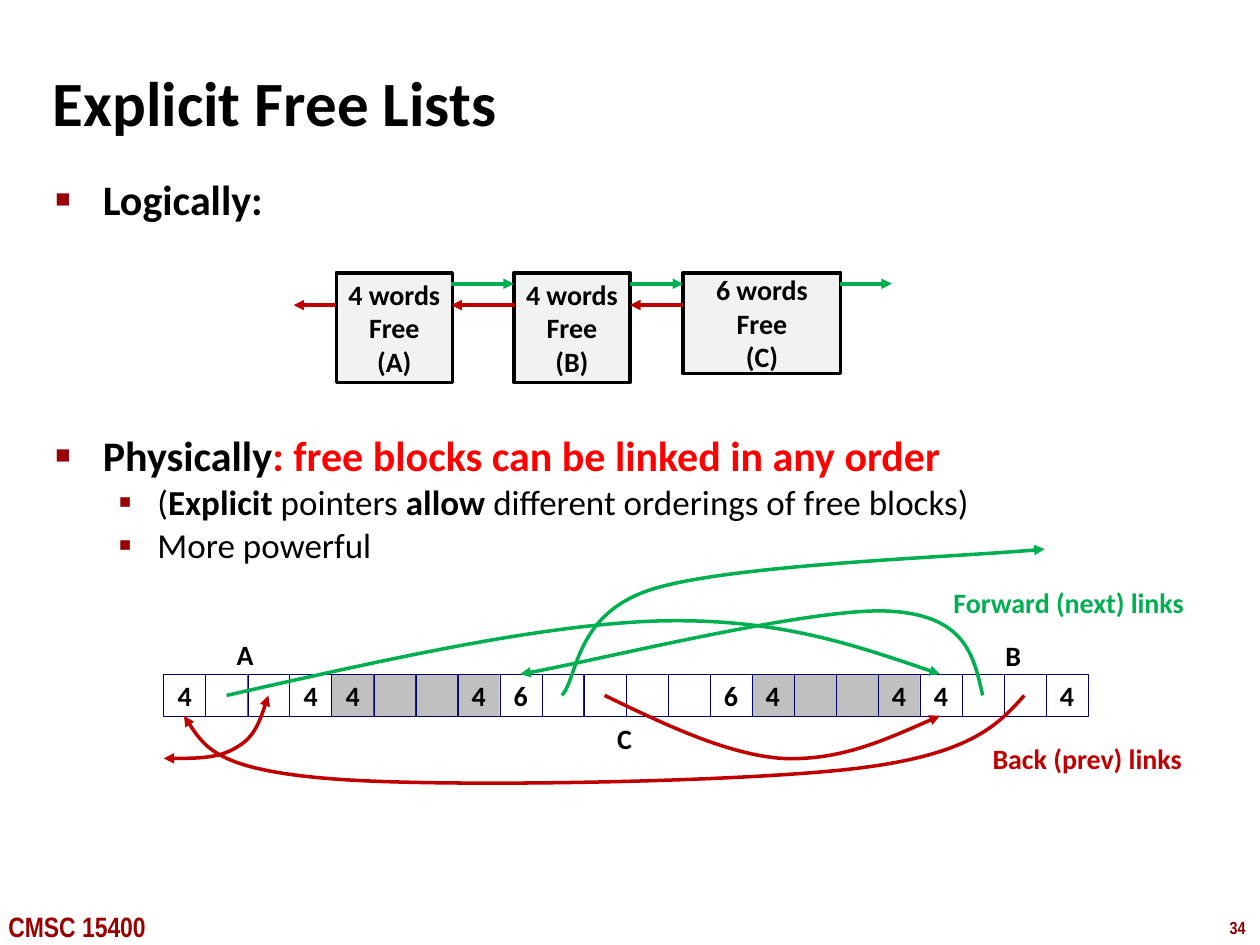
from dataclasses import dataclass

from lxml import etree
from pptx import Presentation
from pptx.dml.color import RGBColor
from pptx.enum.shapes import MSO_CONNECTOR, MSO_SHAPE
from pptx.enum.text import MSO_ANCHOR, MSO_AUTO_SIZE, PP_ALIGN
from pptx.oxml.ns import qn
from pptx.util import Cm, Pt

LINE, RECT = MSO_CONNECTOR.STRAIGHT, MSO_SHAPE.RECTANGLE
TOP, MIDDLE = MSO_ANCHOR.TOP, MSO_ANCHOR.MIDDLE
LEFT, CENTER = PP_ALIGN.LEFT, PP_ALIGN.CENTER
NO_FIT = MSO_AUTO_SIZE.NONE

BLACK = RGBColor(0x00, 0x00, 0x00)
WHITE = RGBColor(0xFF, 0xFF, 0xFF)
PALE = RGBColor(0xF2, 0xF2, 0xF2)
GREY = RGBColor(0xC0, 0xC0, 0xC0)
NAVY = RGBColor(0x00, 0x00, 0x66)
GREEN = RGBColor(0x00, 0xB0, 0x50)
CRIMSON = RGBColor(0xC0, 0x00, 0x00)
RED = RGBColor(0xFF, 0x00, 0x00)
MAROON = RGBColor(0x99, 0x00, 0x00)
DARK = RGBColor(0x80, 0x00, 0x00)


@dataclass
class Node:
    text: str
    left: float
    width: float
    height: float


@dataclass
class Arrow:
    start: float
    end: float
    y: float
    color: RGBColor


@dataclass
class Curve:
    points: list  # start, then two handles and an end for each bend
    color: RGBColor
    double: bool = False


@dataclass
class Label:
    text: str
    left: float
    top: float
    width: float
    color: RGBColor = BLACK
    size: int = 16
    font: str = "Calibri"


@dataclass
class Item:
    runs: list  # (text, bold, color)
    level: int
    before: float


def style(par, size: float, color: RGBColor, bold: bool = True, name: str = "Calibri") -> None:
    font = par.font
    font.name, font.size, font.bold = name, Pt(size), bold
    font.color.rgb = color


def add_heads(line, double: bool = False) -> None:
    ln = line.get_or_add_ln()
    for tag in ("a:headEnd", "a:tailEnd") if double else ("a:tailEnd",):
        etree.SubElement(ln, qn(tag), type="triangle")


def add_box(shapes, text: str, left: float, top: float, width: float, height: float,
            fill: RGBColor, edge: RGBColor, weight: float) -> None:
    box = shapes.add_shape(RECT, Cm(left), Cm(top), Cm(width), Cm(height))
    box.shadow.inherit = False
    box.fill.solid()
    box.fill.fore_color.rgb = fill
    box.line.color.rgb, box.line.width = edge, Pt(weight)
    if text:
        frame = box.text_frame
        frame.text, frame.word_wrap, frame.vertical_anchor = text, False, MIDDLE
        for par in frame.paragraphs:
            par.alignment = CENTER
            style(par, 16, BLACK)


def add_arrow(shapes, arrow: Arrow) -> None:
    line = shapes.add_connector(LINE, Cm(arrow.start), Cm(arrow.y), Cm(arrow.end), Cm(arrow.y))
    line.line.color.rgb, line.line.width = arrow.color, Pt(2)
    add_heads(line)
    etree.SubElement(line._element.spPr, qn("a:effectLst"))


def add_curve(shapes, curve: Curve) -> None:
    first, *rest = [(Cm(x), Cm(y)) for x, y in curve.points]
    pen = shapes.build_freeform(*first)
    pen.add_line_segments(rest, close=False)
    shape = pen.convert_to_shape()
    shape.shadow.inherit = False
    shape.fill.background()
    shape.line.color.rgb, shape.line.width = curve.color, Pt(2)
    add_heads(shape, curve.double)
    # Join every three straight steps into one bend
    steps = list(shape._element.iter(qn("a:lnTo")))
    for i in range(0, len(steps), 3):
        bend = etree.SubElement(steps[i].getparent(), qn("a:cubicBezTo"))
        for step in steps[i:i + 3]:
            bend.append(step[0])
            step.getparent().remove(step)


def add_label(shapes, label: Label) -> None:
    box = shapes.add_textbox(Cm(label.left), Cm(label.top), Cm(label.width), Cm(0.94))
    frame = box.text_frame
    frame.text, frame.word_wrap = label.text, False
    style(frame.paragraphs[0], label.size, label.color, name=label.font)


def place(holder, left: float, top: float, width: float, height: float, anchor):
    holder.left, holder.top = Cm(left), Cm(top)
    holder.width, holder.height = Cm(width), Cm(height)
    frame = holder.text_frame
    frame.word_wrap, frame.auto_size, frame.vertical_anchor = True, NO_FIT, anchor
    return frame


def add_item(par, item: Item) -> None:
    mark, scale, margin, hang, size = (("■", 60, 0.96, 0.96, 24), ("▪", 110, 2.06, 0.79, 20))[item.level]
    par.level, par.alignment = item.level, LEFT
    props = par._p.get_or_add_pPr()
    props.set("marL", str(Cm(margin)))
    props.set("indent", str(-Cm(hang)))
    tint = etree.SubElement(props, qn("a:buClr"))
    etree.SubElement(tint, qn("a:srgbClr"), val=str(MAROON))
    etree.SubElement(props, qn("a:buSzPct"), val=str(scale * 1000))
    etree.SubElement(props, qn("a:buChar"), char=mark)
    par.line_spacing, par.space_before = 0.85, Pt(item.before)
    style(par, size, BLACK, item.level == 0)
    for text, bold, color in item.runs:
        run = par.add_run()
        run.text = text
        run.font.bold, run.font.color.rgb = bold, color


ITEMS = [
    Item([("Logically:", True, BLACK)], 0, 0),
    Item([("Physically", True, BLACK),
          (": free blocks can be linked in any order", True, RED)], 0, 121.5),
    Item([("(", False, BLACK), ("Explicit", True, BLACK), (" pointers ", False, BLACK),
          ("allow ", True, BLACK), ("different orderings of free blocks)", False, BLACK)], 1, 4),
    Item([("More powerful", False, BLACK)], 1, 4),
]
NODES = [
    Node("4 words\nFree\n(A)", 6.78, 2.34, 2.21),
    Node("4 words\nFree\n(B)", 10.36, 2.34, 2.21),
    Node("6 words\nFree\n(C)", 13.77, 3.18, 2.03),
]
ARROWS = [Arrow(a, b, 5.72, GREEN) for a, b in ((9.1, 10.36), (12.7, 13.77), (16.94, 17.98))]
ARROWS += [Arrow(a, b, 6.15, CRIMSON) for a, b in ((13.77, 12.7), (10.38, 9.1), (6.78, 5.92))]
BLOCKS = [(4, WHITE), (4, GREY), (6, WHITE), (4, GREY), (4, WHITE)]
CURVES = [
    Curve([(4.57, 14.02), (7.7, 13.31), (10.85, 12.6), (13.23, 12.52),
           (15.65, 12.45), (17.3, 13.03), (18.95, 13.59)], GREEN),
    Curve([(19.81, 14.02), (19.63, 13.21), (19.46, 12.4), (17.91, 12.32),
           (16.36, 12.24), (11.73, 13.39), (10.49, 13.59)], GREEN),
    Curve([(20.65, 14.02), (20.12, 14.61), (19.58, 15.21), (17.27, 15.49),
           (14.94, 15.77), (8.94, 15.88), (6.68, 15.7),
           (4.42, 15.52), (4.06, 14.99), (3.71, 14.43)], CRIMSON),
    Curve([(12.19, 14.02), (13.41, 14.61), (14.66, 15.21), (15.77, 15.29),
           (16.92, 15.34), (17.93, 14.88), (18.95, 14.43)], CRIMSON),
    Curve([(11.33, 14.02), (11.66, 13.64), (11.58, 12.34), (13.21, 11.86),
           (14.83, 11.38), (19.41, 11.23), (21.06, 11.07)], GREEN),
    Curve([(5.41, 14.02), (5.28, 14.43), (5.13, 14.86), (4.78, 15.06),
           (4.42, 15.29), (3.86, 15.29), (3.3, 15.29)], CRIMSON, True),
]
LABELS = [
    Label("Forward (next) links", 18.97, 11.68, 5.21, GREEN),
    Label("Back (prev) links", 19.76, 14.83, 4.37, CRIMSON),
    Label("A", 4.52, 12.73, 0.86),
    Label("B", 20.02, 12.75, 0.81),
    Label("C", 12.19, 14.43, 0.81),
    Label("CMSC 15400", -0.08, 18.21, 3.61, MAROON, 16, "Arial Narrow"),
    Label("34", 24.54, 18.36, 0.86, DARK, 10, "Arial Narrow"),
]


def main() -> None:
    deck = Presentation()
    deck.slide_width, deck.slide_height = Cm(25.4), Cm(19.05)
    slide = deck.slides.add_slide(deck.slide_layouts[1])
    shapes = slide.shapes

    # Title and list
    frame = place(shapes.title, 0.81, 1.35, 16.87, 1.6, MIDDLE)
    frame.text = "Explicit Free Lists"
    head = frame.paragraphs[0]
    head.alignment, head.line_spacing = LEFT, 0.87
    style(head, 36, BLACK)
    frame = place(slide.placeholders[1], 0.86, 3.53, 23.09, 8, TOP)
    for i, item in enumerate(ITEMS):
        add_item(frame.add_paragraph() if i else frame.paragraphs[0], item)

    # Logical view
    for node in NODES:
        add_box(shapes, node.text, node.left, 5.5, node.width, node.height, PALE, BLACK, 2)
    for arrow in ARROWS:
        add_arrow(shapes, arrow)

    # Memory strip: each block shows its size in its first and last word
    side = 18.63 / sum(size for size, _ in BLOCKS)
    left = 3.3
    for size, fill in BLOCKS:
        for i in range(size):
            text = str(size) if i in (0, size - 1) else ""
            add_box(shapes, text, left, 13.59, side, side, fill, NAVY, 0.25)
            left += side

    # Links and labels
    for curve in CURVES:
        add_curve(shapes, curve)
    for label in LABELS:
        add_label(shapes, label)
    deck.save("out.pptx")


if __name__ == "__main__":
    main()
